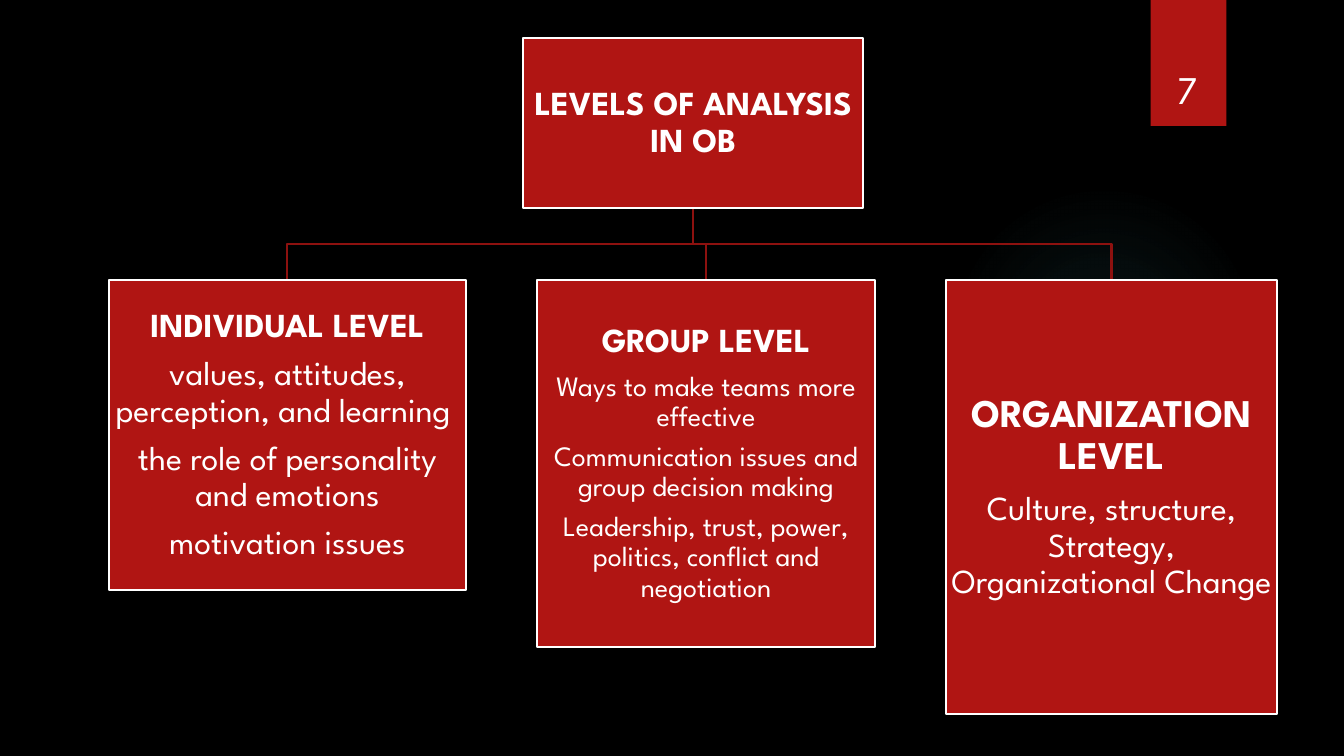
from dataclasses import dataclass

from pptx import Presentation
from pptx.dml.color import RGBColor
from pptx.enum.shapes import MSO_SHAPE
from pptx.enum.text import MSO_ANCHOR, PP_ALIGN
from pptx.oxml import parse_xml
from pptx.oxml.ns import nsdecls, qn
from pptx.util import Inches, Pt

RECT, OVAL = MSO_SHAPE.RECTANGLE, MSO_SHAPE.OVAL
MIDDLE, BOTTOM = MSO_ANCHOR.MIDDLE, MSO_ANCHOR.BOTTOM
CENTER = PP_ALIGN.CENTER


@dataclass(frozen=True)
class Theme:
    back: RGBColor = RGBColor.from_string("000000")
    red: RGBColor = RGBColor.from_string("B01513")
    wire: RGBColor = RGBColor.from_string("8D110F")
    white: RGBColor = RGBColor.from_string("FFFFFF")
    glow: str = "50B9C1"
    font: str = "League Spartan"
    line: Pt = Pt(1.5)
    large: int = 28
    normal: int = 24
    small: int = 20


THEME = Theme()
WIDTH, HEIGHT = Inches(13.33), Inches(7.5)

# Shares of the slide's width and height, in percent
ROOT = (38.92, 5.05, 25.32, 22.5)
LEVEL_Y = 37.05

# Left, width, height, title size, body size, title, body
LEVELS = [
    (8.1, 26.56, 41, THEME.normal, THEME.normal, "INDIVIDUAL LEVEL",
     ["values, attitudes, perception, and learning ",
      "the role of personality and emotions",
      "motivation issues"]),
    (39.97, 25.13, 48.5, THEME.normal, THEME.small, "GROUP LEVEL",
     ["Ways to make teams more effective",
      "Communication issues and group decision making",
      "Leadership, trust, power, politics, conflict and negotiation"]),
    (70.4, 24.61, 57.4, THEME.large, THEME.normal, "ORGANIZATION LEVEL",
     ["Culture, structure, Strategy, Organizational Change"]),
]


def across(share):
    return round(WIDTH * share / 100)


def down(share):
    return round(HEIGHT * share / 100)


def frame(left, top, width, height):
    """Turn percent shares into slide lengths."""
    return across(left), down(top), across(width), down(height)


def add_block(slide, area, kind=RECT):
    block = slide.shapes.add_shape(kind, *frame(*area))
    block.shadow.inherit = False
    block.fill.solid()
    block.fill.fore_color.rgb = THEME.red
    block.line.fill.background()
    return block


def add_glow(slide):
    """Add the faint round light, fading outwards."""
    glow = add_block(slide, (70.59, 24.4, 23.11, 41.07), OVAL)
    stops = "".join(
        f'<a:gs pos="{pos}000"><a:srgbClr val="{THEME.glow}">'
        f'<a:alpha val="{alpha}000"/></a:srgbClr></a:gs>'
        for pos, alpha in ((0, 7), (36, 6), (69, 0)))
    fade = parse_xml(
        f'<a:gradFill {nsdecls("a")}><a:gsLst>{stops}</a:gsLst>'
        '<a:path path="circle"><a:fillToRect l="50000" t="50000" '
        'r="50000" b="50000"/></a:path></a:gradFill>')
    props = glow.element.spPr
    props.replace(props.find(qn("a:solidFill")), fade)


def style_para(para, text, size, bold=False):
    para.text = text
    para.alignment = CENTER
    font = para.font
    font.name, font.size, font.bold = THEME.font, Pt(size), bold
    font.color.rgb = THEME.white


def add_card(slide, area, lines):
    """Add an outlined box; lines holds (text, size, bold) rows."""
    card = add_block(slide, area)
    card.line.color.rgb = THEME.white
    card.line.width = THEME.line
    body = card.text_frame
    body.word_wrap = True
    body.vertical_anchor = MIDDLE
    body.margin_left = body.margin_right = Inches(0.02)
    body.margin_top = body.margin_bottom = Inches(0.02)
    for index, (text, size, bold) in enumerate(lines):
        para = body.add_paragraph() if index else body.paragraphs[0]
        style_para(para, text, size, bold)
        para.line_spacing = 0.9
        para.space_after = Pt(0.35 * size)


def add_branch(slide, left, width):
    """Draw the bent line from the root down to one level's card."""
    root_left, root_top, root_width, root_height = ROOT
    start_x, end_x = across(root_left + root_width / 2), across(left + width / 2)
    start_y, end_y = down(root_top + root_height), down(LEVEL_Y)
    bend_y = (start_y + end_y) // 2
    path = slide.shapes.build_freeform(start_x, start_y)
    path.add_line_segments(
        [(start_x, bend_y), (end_x, bend_y), (end_x, end_y)], close=False)
    branch = path.convert_to_shape()
    branch.shadow.inherit = False
    branch.fill.background()
    branch.line.color.rgb = THEME.wire
    branch.line.width = THEME.line


def add_number(slide, text):
    box = slide.shapes.add_textbox(*frame(84.92, 4.27, 6.9, 11.2))
    box.text_frame.word_wrap = True
    box.text_frame.vertical_anchor = BOTTOM
    style_para(box.text_frame.paragraphs[0], text, THEME.large)


def main():
    deck = Presentation()
    deck.slide_width, deck.slide_height = WIDTH, HEIGHT
    slide = deck.slides.add_slide(deck.slide_layouts[6])
    slide.background.fill.solid()
    slide.background.fill.fore_color.rgb = THEME.back

    add_glow(slide)
    add_block(slide, (85.62, 0, 5.63, 16.67))
    for left, width, *_ in reversed(LEVELS):
        add_branch(slide, left, width)
    add_card(slide, ROOT, [("LEVELS OF ANALYSIS IN OB", THEME.normal, True)])
    for left, width, height, big, size, title, points in LEVELS:
        lines = [(title, big, True)]
        lines += [(point, size, False) for point in points]
        add_card(slide, (left, LEVEL_Y, width, height), lines)
    add_number(slide, "7")
    deck.save("out.pptx")


if __name__ == "__main__":
    main()
